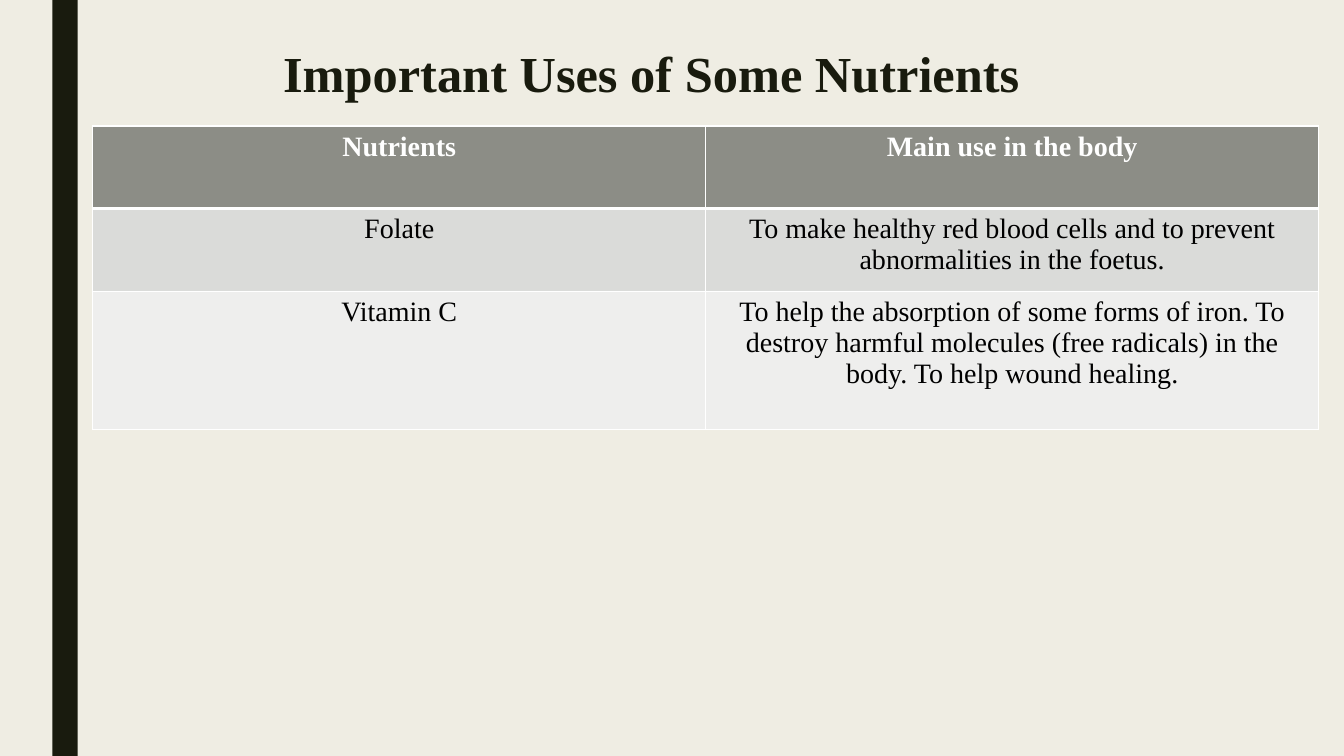
from dataclasses import dataclass

from lxml.etree import SubElement
from pptx import Presentation
from pptx.dml.color import RGBColor
from pptx.enum.shapes import MSO_SHAPE
from pptx.enum.text import MSO_ANCHOR, PP_ALIGN
from pptx.oxml.ns import qn
from pptx.util import Inches, Pt


@dataclass(frozen=True)
class Theme:
    font: str = "Times New Roman"
    background: str = "EFEDE3"
    dark: str = "191B0E"
    white: str = "FFFFFF"
    black: str = "000000"
    row_fills: tuple = ("8C8D86", "DADBD9", "EEEEED")
    title_size: int = 36
    table_size: int = 20


theme = Theme()


def write_text(text_frame, text, size, color, bold):
    paragraph = text_frame.paragraphs[0]
    paragraph.alignment = PP_ALIGN.CENTER
    run = paragraph.add_run()
    run.text = text
    font_format = {"name": theme.font, "size": Pt(size), "bold": bold}
    for attribute, value in font_format.items():
        setattr(run.font, attribute, value)
    run.font.color.rgb = RGBColor.from_string(color)
    return paragraph


def add_border(cell, side, width):
    line = SubElement(cell._tc.get_or_add_tcPr(), qn(f"a:{side}"), w=str(Pt(width)))
    fill = SubElement(line, qn("a:solidFill"))
    SubElement(fill, qn("a:srgbClr"), val=theme.white)


presentation = Presentation()
presentation.slide_width = Inches(13.33)
presentation.slide_height = Inches(7.5)
slide = presentation.slides.add_slide(presentation.slide_layouts[6])

# Background and side bar
slide.background.fill.solid()
slide.background.fill.fore_color.rgb = RGBColor.from_string(theme.background)
side_bar = slide.shapes.add_shape(
    MSO_SHAPE.RECTANGLE, Inches(0.52), 0, Inches(0.25), Inches(7.5))
side_bar.shadow.inherit = False
side_bar.fill.solid()
side_bar.fill.fore_color.rgb = RGBColor.from_string(theme.dark)
side_bar.line.fill.background()

# Title
title_box = slide.shapes.add_textbox(
    Inches(0.92), Inches(0.25), Inches(11.08), Inches(1.62))
title_format = {
    "word_wrap": True,
    "vertical_anchor": MSO_ANCHOR.TOP,
    "margin_top": Inches(0.24),
}
for attribute, value in title_format.items():
    setattr(title_box.text_frame, attribute, value)
title = write_text(title_box.text_frame, "Important Uses of Some Nutrients",
                   theme.title_size, theme.dark, True)
title.line_spacing = 0.89

# Nutrient table
rows = [
    ("Nutrients", "Main use in the body"),
    ("Folate", "To make healthy red blood cells and to prevent "
               "abnormalities in the foetus."),
    ("Vitamin C", "To help the absorption of some forms of iron. "
                  "To destroy harmful molecules (free radicals) in the body. "
                  "To help wound healing."),
]
row_heights = (0.82, 0.82, 1.37)
table = slide.shapes.add_table(
    len(rows), 2, Inches(0.92), Inches(1.25),
    Inches(12.16), Inches(sum(row_heights))).table
for column in table.columns:
    column.width = Inches(6.08)

for row_index, texts in enumerate(rows):
    table.rows[row_index].height = Inches(row_heights[row_index])
    is_header = row_index == 0
    for column_index, text in enumerate(texts):
        cell = table.cell(row_index, column_index)
        write_text(cell.text_frame, text, theme.table_size,
                   theme.white if is_header else theme.black, is_header)
        # Borders precede the fill; the rule under the header is thicker
        border_widths = {
            "lnL": 1,
            "lnR": 1,
            "lnT": 3 if row_index == 1 else 1,
            "lnB": 3 if is_header else 1,
        }
        for side, width in border_widths.items():
            add_border(cell, side, width)
        cell.fill.solid()
        cell.fill.fore_color.rgb = RGBColor.from_string(theme.row_fills[row_index])

presentation.save("out.pptx")
